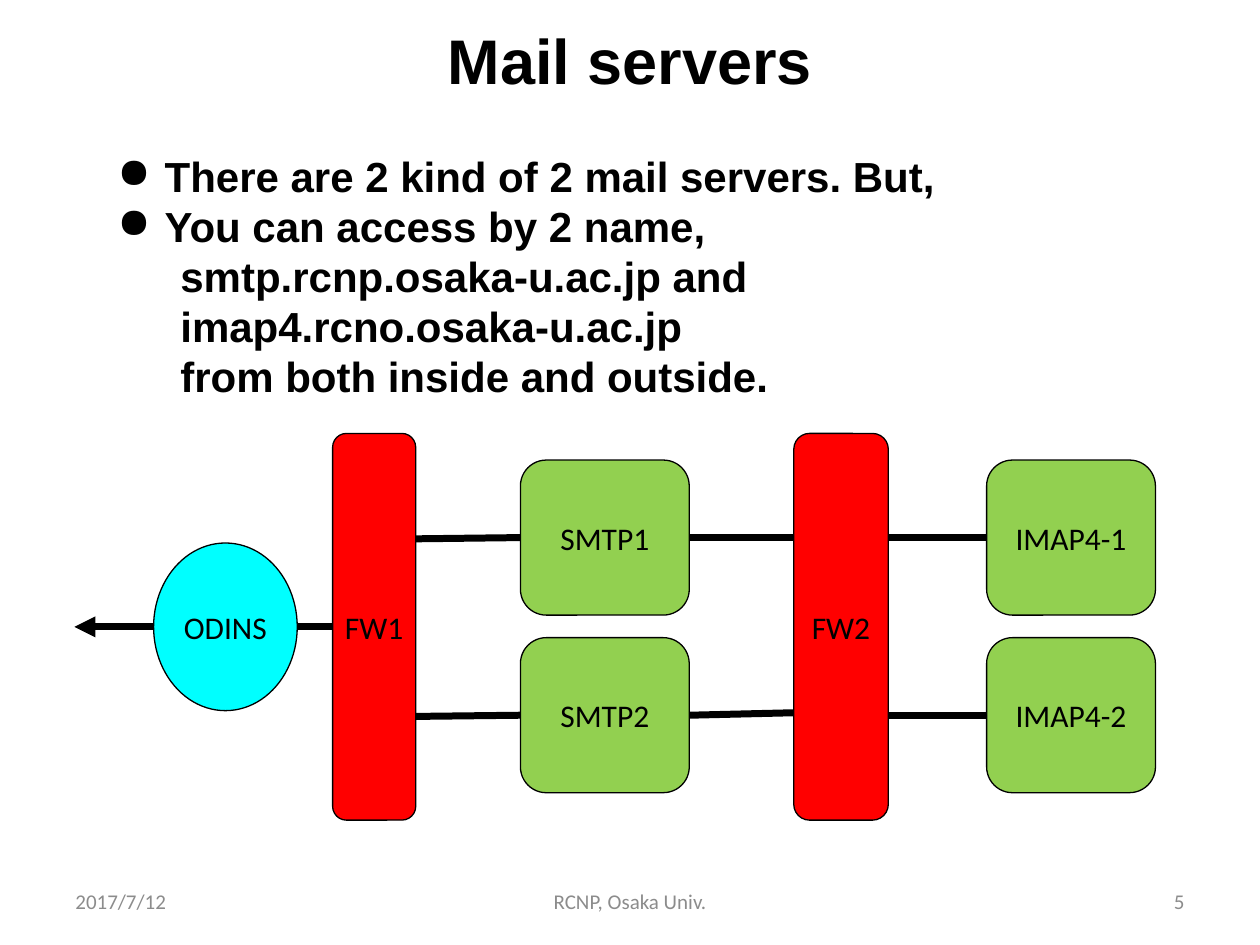
from lxml import etree
from pptx import Presentation
from pptx.dml.color import RGBColor
from pptx.enum.shapes import MSO_CONNECTOR, MSO_SHAPE
from pptx.enum.text import MSO_ANCHOR, PP_ALIGN
from pptx.oxml.ns import qn
from pptx.util import Pt

ROUND, OVAL = MSO_SHAPE.ROUNDED_RECTANGLE, MSO_SHAPE.OVAL
STRAIGHT = MSO_CONNECTOR.STRAIGHT
MIDDLE, TOP = MSO_ANCHOR.MIDDLE, MSO_ANCHOR.TOP
LEFT, CENTER, RIGHT = PP_ALIGN.LEFT, PP_ALIGN.CENTER, PP_ALIGN.RIGHT
COLORS = {"ink": "000000", "footer": "8C8C8C", "network": "00FFFF",
          "firewall": "FF0000", "server": "92D050"}


def rgb(name):
    return RGBColor.from_string(COLORS[name])


def add_run(p, text, size, font, color="ink", bold=False):
    r = p.add_run()
    r.text = text
    r.font.size, r.font.name, r.font.bold = Pt(size), font, bold
    r.font.color.rgb = rgb(color)


def add_textbox(s, box, anchor):
    tf = s.shapes.add_textbox(*map(Pt, box)).text_frame
    tf.word_wrap, tf.vertical_anchor = True, anchor
    return tf


def add_title(s, box):
    sp = s.shapes.title
    sp.left, sp.top, sp.width, sp.height = map(Pt, box)
    sp.text_frame.vertical_anchor = MIDDLE
    p = sp.text_frame.paragraphs[0]
    p.alignment = CENTER
    add_run(p, "Mail servers", 36, "Arial", bold=True)


def add_body(s, box):
    tf = add_textbox(s, box, TOP)
    lines = [
        (0, "There are 2 kind of 2 mail servers. But,"),
        (0, "You can access by 2 name,"),
        (1, "smtp.rcnp.osaka-u.ac.jp and imap4.rcno.osaka-u.ac.jp"),
        (1, "from both inside and outside."),
    ]
    for i, (level, text) in enumerate(lines):
        p = tf.add_paragraph() if i else tf.paragraphs[0]
        p.level, p.line_spacing = level, Pt(28.6)
        pPr = p._p.get_or_add_pPr()
        pPr.set("marL", str(Pt(36 if level else 27)))
        pPr.set("indent", str(Pt(0 if level else -27)))
        if level:
            etree.SubElement(pPr, qn("a:buNone"))
        else:
            etree.SubElement(pPr, qn("a:buChar")).set("char", "●")
        add_run(p, text, 24, "Arial", bold=True)


def add_node(s, kind, box, color, label):
    sp = s.shapes.add_shape(kind, *map(Pt, box))
    sp.shadow.inherit = False
    sp.fill.solid()
    sp.fill.fore_color.rgb = rgb(color)
    sp.line.color.rgb = rgb("ink")
    sp.line.width = Pt(0.75)
    tf = sp.text_frame
    tf.word_wrap, tf.vertical_anchor = False, MIDDLE
    p = tf.paragraphs[0]
    p.alignment = CENTER
    add_run(p, label, 18, "Calibri")


def add_link(s, x1, y1, x2, y2, arrow=False):
    c = s.shapes.add_connector(STRAIGHT, Pt(x1), Pt(y1), Pt(x2), Pt(y2))
    c.line.color.rgb = rgb("ink")
    c.line.width = Pt(4)
    if arrow:
        etree.SubElement(c.line._get_or_add_ln(), qn("a:headEnd")).set("type", "triangle")
    etree.SubElement(c._element.spPr, qn("a:effectLst"))


def add_network(s, box):
    left, top, width, height = box
    mid = top + height / 2
    server_w, server_h = 96.5, 88.6
    odins_x, odins_w, odins_h = left + 45.3, 82.1, 95.8
    fw1_x, fw1_w = left + 147.6, 47.5
    fw2_x, fw2_w = left + 411.1, 54
    smtp_x, imap_x = left + 254.9, left + width - server_w

    # Links from the outside to the first firewall
    add_link(s, left, mid, odins_x, mid, arrow=True)
    add_link(s, odins_x + odins_w, mid, fw1_x, mid)

    # Network and firewalls
    add_node(s, OVAL, (odins_x, mid - odins_h / 2, odins_w, odins_h), "network", "ODINS")
    add_node(s, ROUND, (fw1_x, top, fw1_w, height), "firewall", "FW1")
    add_node(s, ROUND, (fw2_x, top, fw2_w, height), "firewall", "FW2")

    # One row of servers and links for each number
    for number, offset, slant in ((1, -51, 0), (2, 50.5, -1.4)):
        y = mid + offset
        for x, name in ((smtp_x, f"SMTP{number}"), (imap_x, f"IMAP4-{number}")):
            add_node(s, ROUND, (x, y - server_h / 2, server_w, server_h), "server", name)
        add_link(s, fw1_x + fw1_w, y + 0.7, smtp_x, y)
        add_link(s, smtp_x + server_w, y, fw2_x, y + slant)
        add_link(s, fw2_x + fw2_w + 0.7, y, imap_x, y)


def add_footer(s, box):
    left, top, width, height = box
    side, center = 168, 228
    parts = [
        (left, side, LEFT, "2017/7/12"),
        (left + (width - center) / 2, center, CENTER, "RCNP, Osaka Univ."),
        (left + width - side, side, RIGHT, "5"),
    ]
    for x, w, align, text in parts:
        p = add_textbox(s, (x, top, w, height), MIDDLE).paragraphs[0]
        p.alignment = align
        add_run(p, text, 12, "Calibri", "footer")


def main():
    prs = Presentation()
    prs.slide_width, prs.slide_height = Pt(720), Pt(540)
    s = prs.slides.add_slide(prs.slide_layouts[5])
    add_title(s, (54, 8.6, 612, 51))
    add_body(s, (60, 82.8, 587, 145.4))
    add_network(s, (42.5, 247.7, 617.8, 221))
    add_footer(s, (36, 500.4, 648, 28.8))
    prs.save("out.pptx")


if __name__ == "__main__":
    main()
